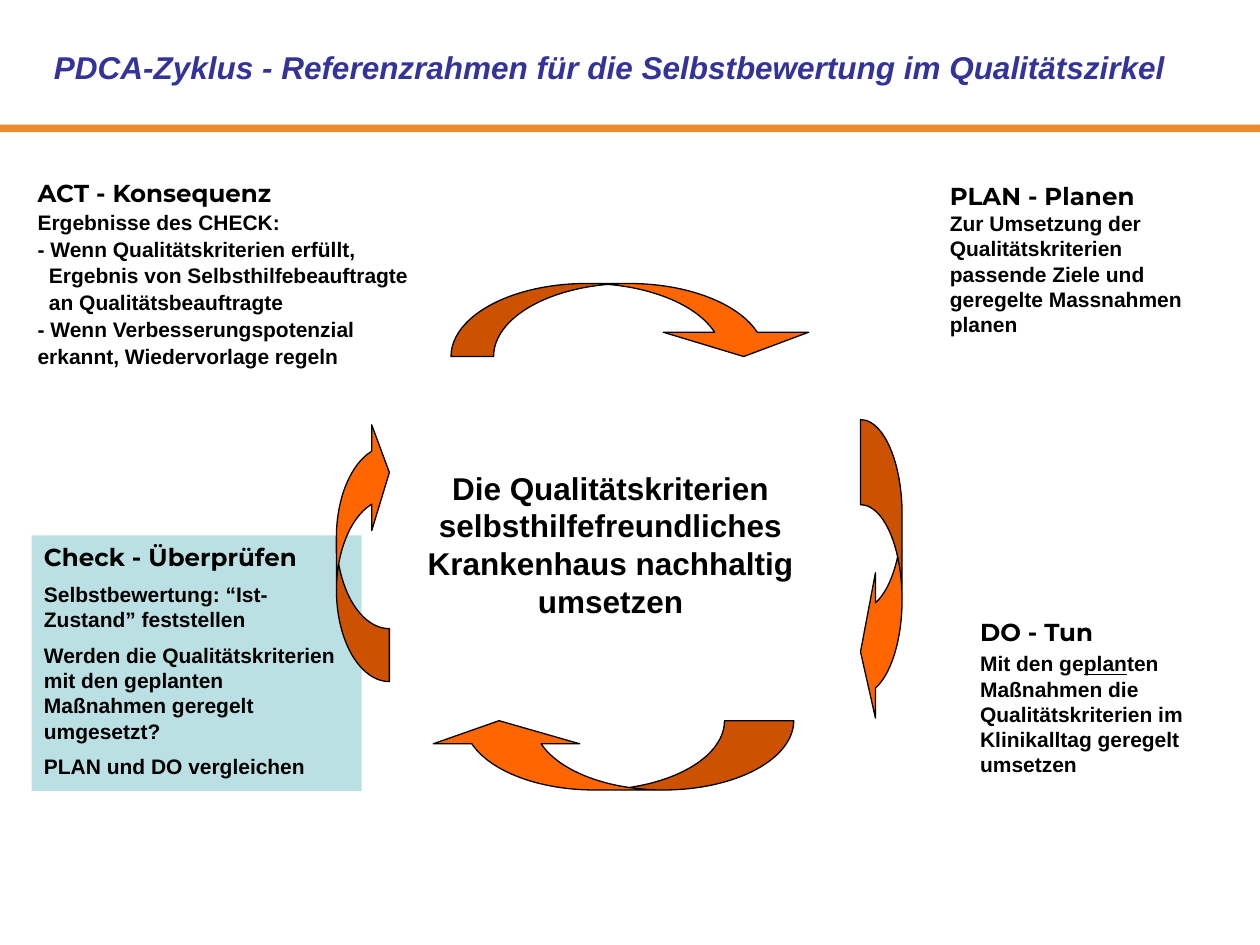
import pptx
import pptx.dml.color
import pptx.enum.shapes
import pptx.enum.text
import pptx.util

Inches = pptx.util.Inches
Pt = pptx.util.Pt
RGBColor = pptx.dml.color.RGBColor
Shape = pptx.enum.shapes.MSO_SHAPE
Align = pptx.enum.text.PP_ALIGN

BLACK = RGBColor(0x00, 0x00, 0x00)
BLUE = RGBColor(0x33, 0x33, 0x99)
RULE_ORANGE = RGBColor(0xEB, 0x8B, 0x2D)
ARROW_ORANGE = RGBColor(0xFF, 0x66, 0x00)
PALE_TEAL = RGBColor(0xBB, 0xE0, 0xE3)


class SlideBuilder:
    heading_font, body_font = "Montserrat", "Arial"
    heading_size, body_size, large_size = 14, 12, 18

    def __init__(self, slide):
        self.slide = slide

    def add_shape(self, kind, place, fill, outline=None):
        shape = self.slide.shapes.add_shape(kind, *map(Inches, place))
        shape.shadow.inherit = False
        shape.fill.solid()
        shape.fill.fore_color.rgb = fill
        if outline is None:
            shape.line.fill.background()
        else:
            shape.line.color.rgb = outline
            shape.line.width = Pt(0.75)
        return shape

    def add_arrow(self, kind, place, adjustments, flips=()):
        arrow = self.add_shape(kind, place, ARROW_ORANGE, BLACK)
        for index, value in enumerate(adjustments):
            arrow.adjustments[index] = value
        for flip in flips:
            arrow.element.spPr.xfrm.set(flip, "1")

    def prepare_frame(self, shape):
        frame = shape.text_frame
        frame.word_wrap = True
        frame.auto_size = pptx.enum.text.MSO_AUTO_SIZE.SHAPE_TO_FIT_TEXT
        frame.vertical_anchor = pptx.enum.text.MSO_ANCHOR.TOP
        return frame

    def add_span(self, para, text, font, size, color=BLACK, italic=False, underline=False):
        span = para.add_run()
        span.text = text
        span.font.name = font
        span.font.size = Pt(size)
        span.font.bold = True
        span.font.color.rgb = color
        if italic:
            span.font.italic = True
        if underline:
            span.font.underline = True

    def add_line(self, place, text, color=BLACK, align=Align.LEFT, italic=False):
        """A box with one paragraph of large text."""
        box = self.slide.shapes.add_textbox(*map(Inches, place))
        para = self.prepare_frame(box).paragraphs[0]
        para.alignment = align
        self.add_span(para, text, self.body_font, self.large_size, color, italic)

    def add_phase(self, place, heading, body, gap=0.0, spacing=None, fill=None):
        """A heading and paragraphs, each a list of (text, underlined) with an indent."""
        if fill is None:
            box = self.slide.shapes.add_textbox(*map(Inches, place))
        else:
            box = self.add_shape(Shape.RECTANGLE, place, fill)
        frame = self.prepare_frame(box)
        para = frame.paragraphs[0]
        para.alignment = Align.LEFT
        para.line_spacing = spacing
        self.add_span(para, heading, self.heading_font, self.heading_size)
        for spans, indent in body:
            para = frame.add_paragraph()
            para.alignment = Align.LEFT
            para.line_spacing = spacing
            para.space_before = Pt(gap * self.body_size)
            if indent:
                para._p.get_or_add_pPr().set("marL", str(Inches(indent)))
            for text, underlined in spans:
                self.add_span(para, text, self.body_font, self.body_size, underline=underlined)


def plain(text, indent=0):
    return [(text, False)], indent


def main():
    deck = pptx.Presentation()
    deck.slide_width, deck.slide_height = Inches(10), Inches(7.5)
    page = SlideBuilder(deck.slides.add_slide(deck.slide_layouts[6]))

    # Rule below the title
    page.add_shape(Shape.RECTANGLE, (0, 0.99, 10, 0.06), RULE_ORANGE)

    # Act, and the arrow to Plan
    page.add_phase((0.2, 1.39, 3.31, 1.63), "ACT - Konsequenz", [
        plain("Ergebnisse des CHECK:"),
        plain("- Wenn Qualitätskriterien erfüllt,"),
        plain("Ergebnis von Selbsthilfebeauftragte", 0.09),
        plain("an Qualitätsbeauftragte", 0.09),
        plain("- Wenn Verbesserungspotenzial"),
        plain("erkannt, Wiedervorlage regeln"),
    ], gap=0.2, spacing=0.9)
    page.add_arrow(Shape.CURVED_UP_ARROW, (3.58, 2.25, 2.9, 0.58),
                   (0.583, 1.99, 0.333), ["flipV"])

    # Plan, and the arrow to Do
    page.add_phase((7.44, 1.39, 2.31, 1.33), "PLAN - Planen", [
        plain("Zur Umsetzung der Qualitätskriterien passende Ziele und "
              "geregelte Massnahmen planen"),
    ])
    page.add_arrow(Shape.CURVED_LEFT_ARROW, (6.83, 3.33, 0.33, 2.42), (2.047, 3.497, 0.36))

    # Do, and the arrow to Check
    page.add_phase((7.68, 4.85, 2.32, 1.37), "DO - Tun", [
        ([("Mit den ge", False), ("plan", True),
          ("ten Maßnahmen die Qualitätskriterien im Klinikalltag geregelt umsetzen", False)], 0),
    ], gap=0.2)
    page.add_arrow(Shape.CURVED_DOWN_ARROW, (3.38, 5.72, 2.92, 0.55),
                   (1.057, 2.113, 0.333), ["flipH", "flipV"])

    # Check, and the arrow to Act
    page.add_phase((0.25, 4.25, 2.62, 2.03), "Check - Überprüfen", [
        plain("Selbstbewertung: “Ist-Zustand” feststellen"),
        plain("Werden die Qualitätskriterien mit den geplanten Maßnahmen geregelt umgesetzt?"),
        plain("PLAN und DO vergleichen"),
    ], gap=0.5, fill=PALE_TEAL)
    page.add_arrow(Shape.CURVED_RIGHT_ARROW, (2.67, 3.33, 0.42, 2.08),
                   (1, 2, 0.333), ["flipV"])

    # Goal in the centre, and the title
    page.add_line((3.27, 3.67, 3.15, 1.3),
                  "Die Qualitätskriterien selbsthilfefreundliches Krankenhaus nachhaltig umsetzen",
                  align=Align.CENTER)
    page.add_line((0.33, 0.33, 9.08, 0.4),
                  "PDCA-Zyklus - Referenzrahmen für die Selbstbewertung im Qualitätszirkel",
                  color=BLUE, italic=True)

    deck.save("out.pptx")


if __name__ == "__main__":
    main()
